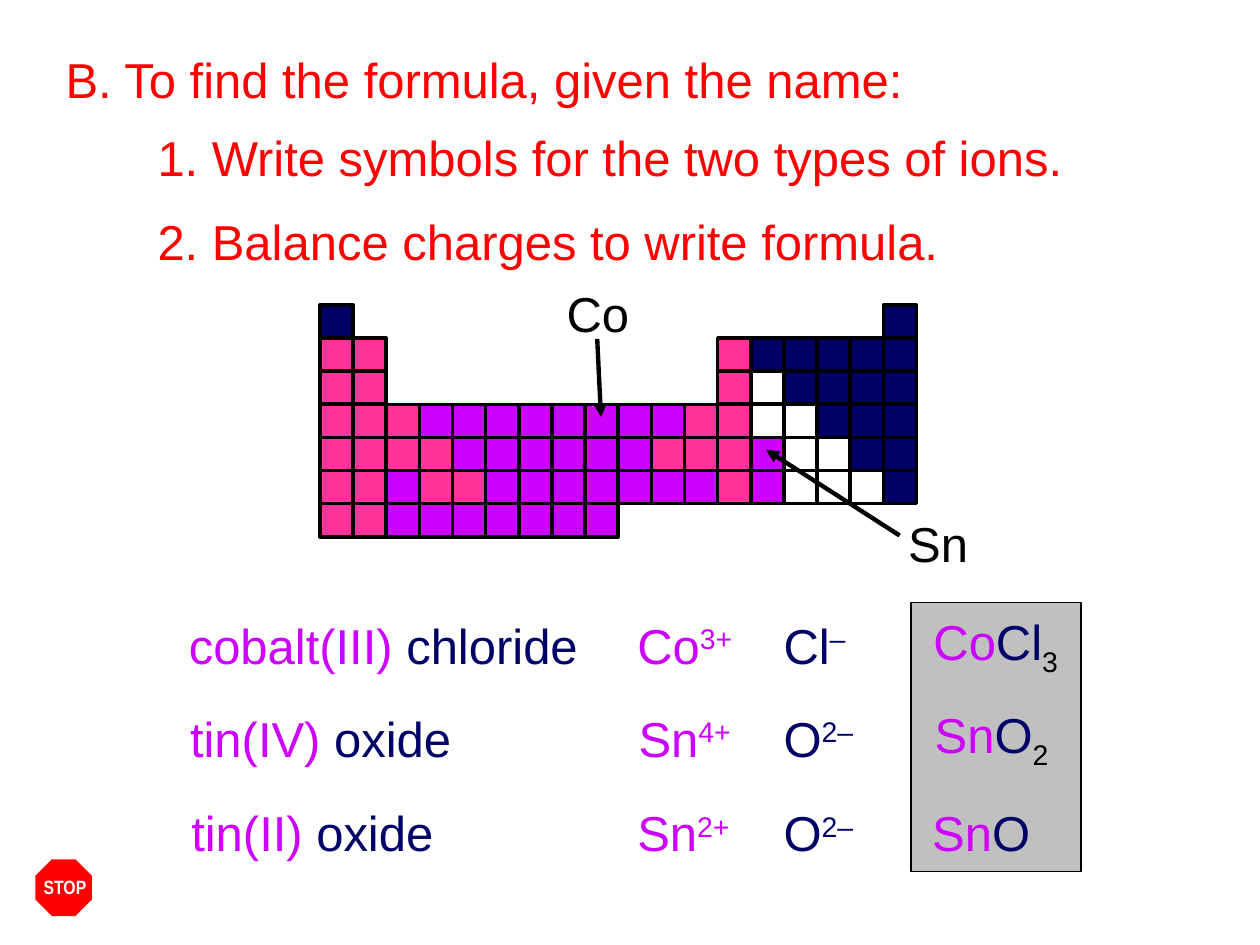
from lxml import etree
from pptx import Presentation
from pptx.dml.color import RGBColor
from pptx.enum.shapes import MSO_CONNECTOR as CONN, MSO_SHAPE as SHAPE
from pptx.enum.text import MSO_ANCHOR as ANCHOR, MSO_AUTO_SIZE as AUTO, PP_ALIGN as ALIGN
from pptx.oxml.ns import qn
from pptx.util import Inches, Pt

RED = RGBColor(0xFF, 0x00, 0x00)
PINK = RGBColor(0xFF, 0x33, 0x99)
VIOLET = RGBColor(0xCC, 0x00, 0xFF)
NAVY = RGBColor(0x00, 0x00, 0x66)
GRAY = RGBColor(0xC0, 0xC0, 0xC0)
BLACK = RGBColor(0x00, 0x00, 0x00)
WHITE = RGBColor(0xFF, 0xFF, 0xFF)

SUPER, SUB = 30000, -25000
CELL, TABLE_LEFT, TABLE_TOP = 0.263, 2.54, 2.42
ELEMENT_FILLS = {"f": PINK, "v": VIOLET, "n": NAVY, "o": None}
PERIODS = [
    "n................n",
    "ff..........fnnnnn",
    "ff..........fonnnn",
    "fffvvvvvvvvffoonnn",
    "ffffvvvvvvfffvoonn",
    "ffvffvvvvvvvfvooon",
    "ffvvvvvvv.........",
]
COMPOUNDS = [
    (4.83, [
        (1.4, 3.41, [("cobalt(III) ", VIOLET), ("chloride", NAVY)]),
        (4.96, 1.11, [("Co", VIOLET), ("3+", VIOLET, SUPER)]),
        (6.12, 0.82, [("Cl", NAVY), ("–", NAVY, SUPER)]),
        (7.31, 1.32, [("Co", VIOLET), ("Cl", NAVY), ("3", BLACK, SUB)]),
    ]),
    (5.57, [
        (1.41, 2.39, [("tin(IV) ", VIOLET), ("oxide", NAVY)]),
        (4.97, 1.09, [("Sn", VIOLET), ("4+", VIOLET, SUPER)]),
        (6.12, 0.91, [("O", NAVY), ("2–", NAVY, SUPER)]),
        (7.32, 1.23, [("Sn", VIOLET), ("O", NAVY), ("2", BLACK, SUB)]),
    ]),
    (6.32, [
        (1.42, 2.24, [("tin(II) ", VIOLET), ("oxide", NAVY)]),
        (4.96, 1.09, [("Sn", VIOLET), ("2+", VIOLET, SUPER)]),
        (6.12, 0.91, [("O", NAVY), ("2–", NAVY, SUPER)]),
        (7.3, 1.09, [("Sn", VIOLET), ("O", NAVY)]),
    ]),
]


def add_text(p, text, color=BLACK, baseline=0, size=28, font="Arial", bold=False):
    r = p.add_run()
    r.text = text
    r.font.name = font
    r.font.size = Pt(size)
    r.font.bold = bold
    r.font.color.rgb = color
    if baseline:
        r._r.get_or_add_rPr().set("baseline", str(baseline))


class SlideBuilder:
    def __init__(self, slide):
        self.s = slide

    def placeholder(self, index, box, lines, gap=0):
        sp = self.s.placeholders[index]
        sp.left, sp.top, sp.width, sp.height = map(Inches, box)
        tf = sp.text_frame
        tf.word_wrap = True
        tf.auto_size = AUTO.NONE
        tf.vertical_anchor = ANCHOR.MIDDLE if index == 0 else ANCHOR.TOP
        for i, line in enumerate(lines):
            p = tf.paragraphs[0] if i == 0 else tf.add_paragraph()
            p.alignment = ALIGN.LEFT
            p.space_before = Pt(gap if i else 0)
            p.space_after = Pt(0)
            pPr = p._p.get_or_add_pPr()
            pPr.set("marL", "0")
            pPr.set("indent", "0")
            etree.SubElement(pPr, qn("a:buNone"))
            add_text(p, line, color=RED)

    def shape(self, kind, box, fill=None, line_width=0):
        sp = self.s.shapes.add_shape(kind, *map(Inches, box))
        sp.shadow.inherit = False
        if fill is None:
            sp.fill.background()
        else:
            sp.fill.solid()
            sp.fill.fore_color.rgb = fill
        if line_width:
            sp.line.color.rgb = BLACK
            sp.line.width = Pt(line_width)
        else:
            sp.line.fill.background()

    def text(self, box, runs, align=ALIGN.LEFT, anchor=ANCHOR.MIDDLE, wrap=False, **fmt):
        tf = self.s.shapes.add_textbox(*map(Inches, box)).text_frame
        tf.word_wrap = wrap
        tf.auto_size = AUTO.SHAPE_TO_FIT_TEXT
        tf.vertical_anchor = anchor
        p = tf.paragraphs[0]
        p.alignment = align
        for run in runs:
            add_text(p, *run, **fmt)

    def arrow(self, start, end):
        line = self.s.shapes.add_connector(CONN.STRAIGHT, *map(Inches, start + end))
        line.line.color.rgb = BLACK
        line.line.width = Pt(2.5)
        spPr = line._element.spPr
        etree.SubElement(spPr.find(qn("a:ln")), qn("a:tailEnd"), type="triangle")
        etree.SubElement(spPr, qn("a:effectLst"))

    def element_label(self, symbol, left, top, start, end):
        self.text((left, top, 0.75, 0.57), [(symbol,)], align=ALIGN.CENTER,
                  anchor=ANCHOR.TOP, wrap=True)
        self.arrow(start, end)

    def periodic_table(self):
        for row, period in enumerate(PERIODS):
            for col, code in enumerate(period):
                if code in ELEMENT_FILLS:
                    box = (TABLE_LEFT + col * CELL, TABLE_TOP + row * CELL, CELL, CELL)
                    self.shape(SHAPE.RECTANGLE, box, ELEMENT_FILLS[code], 2)


def main():
    prs = Presentation()
    prs.slide_width, prs.slide_height = Inches(10), Inches(7.5)
    b = SlideBuilder(prs.slides.add_slide(prs.slide_layouts[1]))

    b.placeholder(0, (0.42, 0.34, 7.2, 0.57), ["B. To find the formula, given the name:"])
    b.placeholder(1, (1.15, 0.96, 7.8, 1.22), [
        "1. Write symbols for the two types of ions.",
        "2. Balance charges to write formula.",
    ], gap=14.5)

    b.periodic_table()
    b.element_label("Co", 4.37, 2.2, (4.74, 2.69), (4.77, 3.31))
    b.element_label("Sn", 7.07, 4.03, (7.14, 4.25), (6.08, 3.57))

    b.shape(SHAPE.RECTANGLE, (7.23, 4.78, 1.35, 2.14), GRAY, 0.75)
    for top, columns in COMPOUNDS:
        for left, width, runs in columns:
            b.text((left, top, width, 0.57), runs)

    b.shape(SHAPE.OCTAGON, (0.28, 6.82, 0.45, 0.45), RED)
    b.text((0.24, 6.9, 0.55, 0.29), [("STOP", WHITE)], align=ALIGN.CENTER,
           anchor=ANCHOR.TOP, size=11, font="Arial Narrow", bold=True)

    prs.save("out.pptx")


if __name__ == "__main__":
    main()
